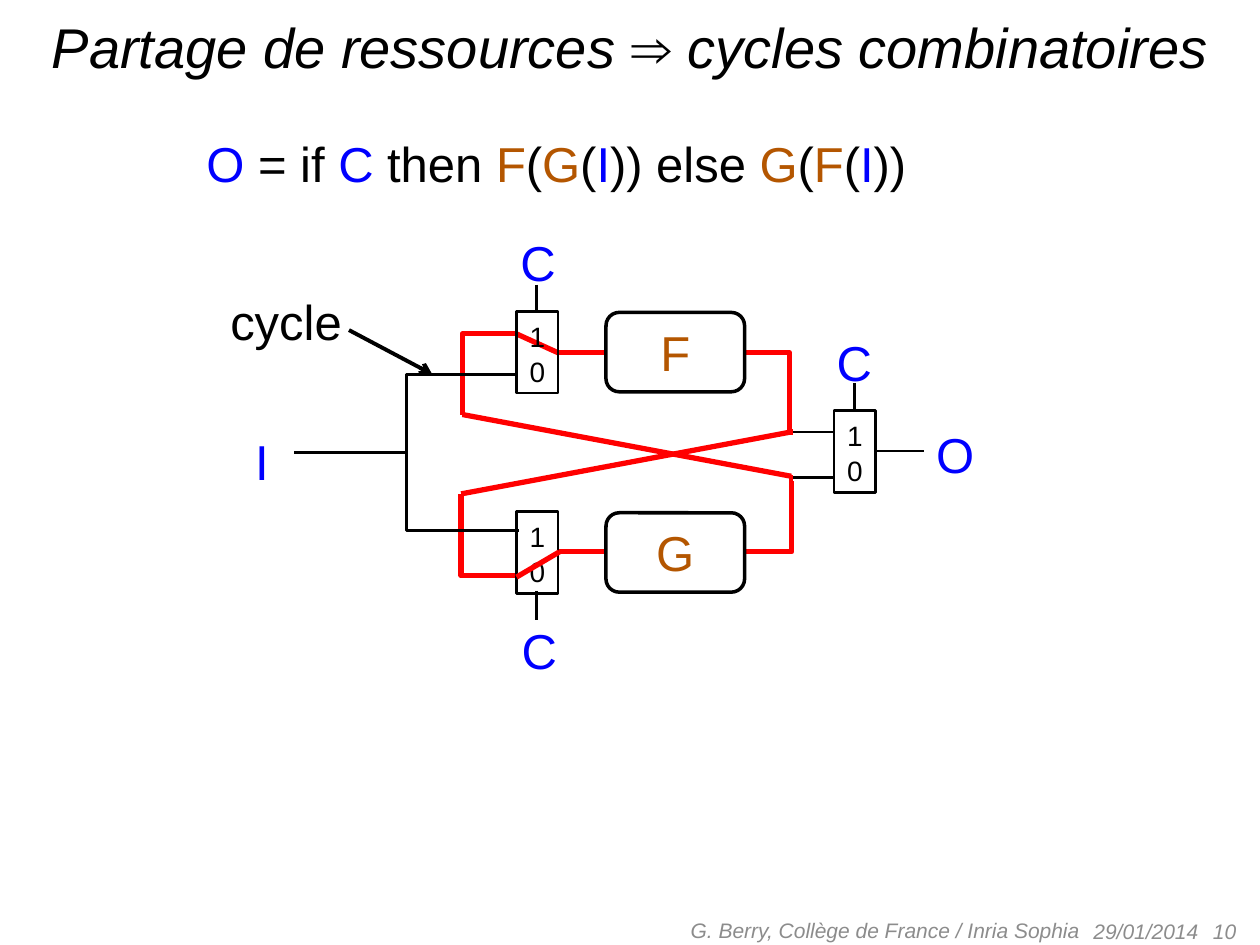
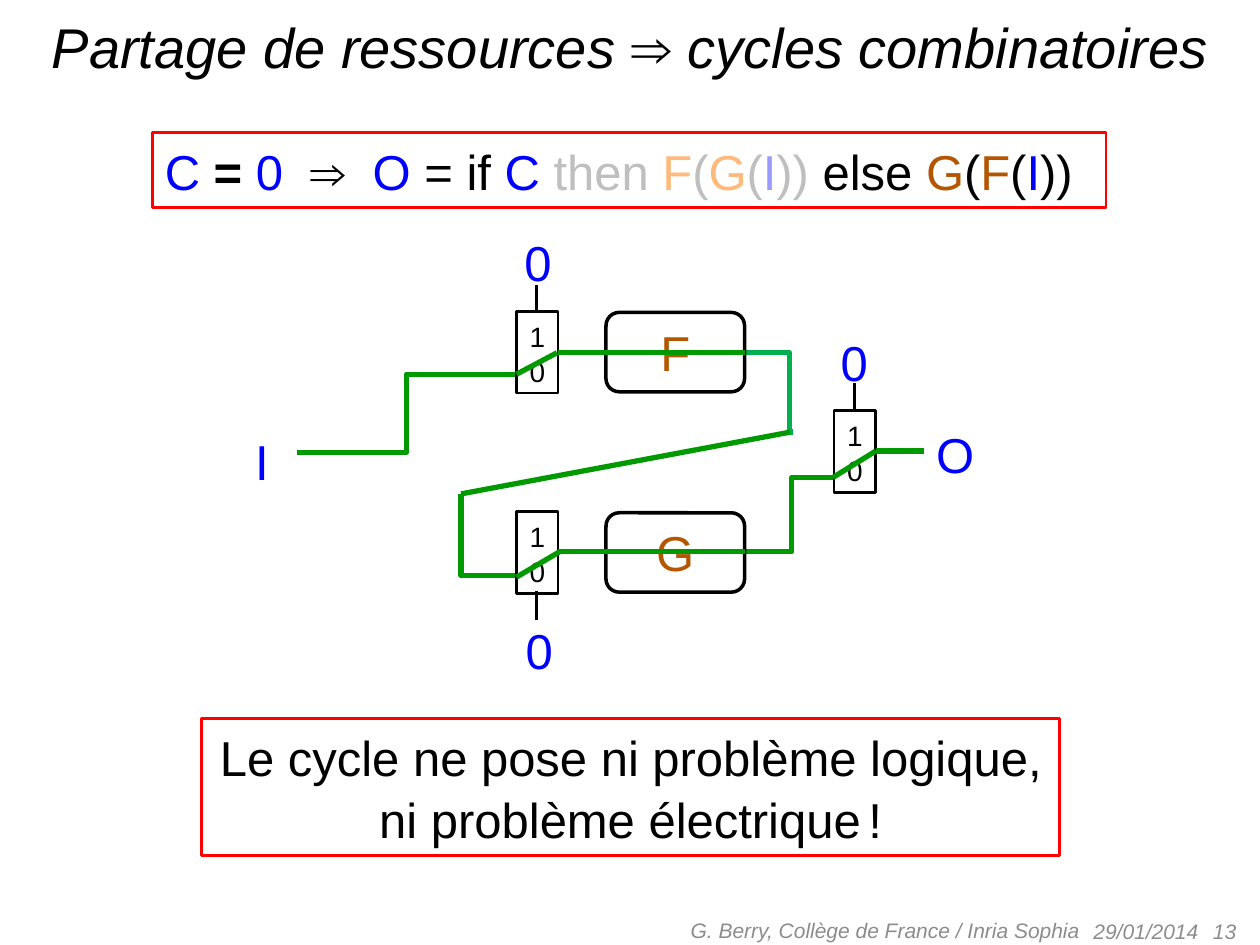
from lxml.etree import SubElement
from pptx import Presentation
from pptx.dml.color import RGBColor
from pptx.enum.shapes import MSO_CONNECTOR as Conn, MSO_SHAPE as Shape
from pptx.enum.text import MSO_ANCHOR as Anchor, PP_ALIGN as Align
from pptx.oxml.ns import qn
from pptx.util import Inches, Pt

BLACK, WHITE, RED = "000000", "FFFFFF", "FF0000"
BLUE, BROWN, GREY = "0000FF", "B45600", "8C8C8C"
GREEN, LIGHT_GREEN = "009A00", "00B050"
PALE, PALE_BROWN, PALE_BLUE = "BFBFBF", "FFBA7B", "9999FF"
ITALIC, BOLD = {"italic": True}, {"bold": True}

TITLE = [("Partage de ressources ", BLACK, ITALIC), ("⇒ ", BLACK),
         ("cycles combinatoires", BLACK, ITALIC)]
AUTHOR, DATE = "G. Berry, Collège de France / Inria Sophia", "29/01/2014"

ELSE_CALL = [("G", BROWN), ("(", BLACK), ("F", BROWN), ("(", BLACK),
             ("I", BLUE), ("))", BLACK)]
FORMULA = [("O", BLUE), (" = if ", BLACK), ("C", BLUE), (" then ", BLACK),
           ("F", BROWN), ("(", BLACK), ("G", BROWN), ("(", BLACK),
           ("I", BLUE), (")) else ", BLACK), *ELSE_CALL]
FORMULA_ZERO = [("C ", BLUE), ("= ", BLACK, BOLD), ("0  ", BLUE),
                ("⇒  ", BLACK, BOLD), ("O ", BLUE), ("= if ", BLACK),
                ("C ", BLUE), ("then ", PALE), ("F", PALE_BROWN), ("(", PALE),
                ("G", PALE_BROWN), ("(", PALE), ("I", PALE_BLUE),
                ("))", PALE), (" else ", BLACK), *ELSE_CALL]
CONCLUSION = [[("Le cycle ne pose ni problème logique,", BLACK)],
              [("ni problème électrique", BLACK),
               (" ", BLACK, {"size": Pt(16)}), ("!", BLACK)]]

BLOCKS = [("F", 2.48), ("G", 4.07)]
MUXES = [(4.1, 2.47, None), (4.1, 4.06, WHITE), (6.62, 3.26, WHITE)]
SELECTORS = [(4.27, 1.77), (4.28, 4.85), (6.78, 2.57)]
PORTS = [("I", 2.08, 3.35), ("O", 7.58, 3.3)]

F_IN, G_IN = (4.43, 2.8, 4.81, 2.8), (4.43, 4.38, 4.81, 4.38)
F_THROUGH, G_THROUGH = (4.81, 2.8, 5.91, 2.8), (4.81, 4.38, 5.91, 4.38)
F_OUT, G_OUT = (5.91, 2.8, 6.62, 3.43, 0.5), (5.91, 4.38, 6.66, 3.79, 0.5)
F_TO_G = [(4.09, 4.57, 3.66, 3.92, 1), (3.66, 3.92, 6.27, 3.43)]
G_TO_F = [(4.1, 2.65, 3.67, 3.29, 1), (3.67, 3.29, 6.28, 3.78)]
MUX_G_LOW = (4.1, 4.58, 4.44, 4.38)
I_TO_F, I_TO_G = (4.09, 2.97, 2.36, 3.59, 0.5), (4.12, 4.21, 2.33, 3.59, 0.5)
OUTPUT = (6.95, 3.58, 7.33, 3.58)
SELECT_STEMS = [(4.26, 2.26, 4.26, 2.47), (4.26, 4.69, 4.26, 4.92),
                (6.78, 3.04, 6.78, 3.25)]
MUX_O_HIGH, MUX_O_LOW = (6.29, 3.43, 6.62, 3.43), (6.29, 3.79, 6.62, 3.79)

SLIDES = [
    {"number": "10", "select": "C",
     "below": [(RED, 3, [F_OUT, G_OUT, F_IN, G_IN, (4.1, 2.65, 4.43, 2.8),
                         *F_TO_G, *G_TO_F]),
               (WHITE, 4.5, [MUX_O_HIGH, MUX_O_LOW])],
     "above": [(BLACK, 1.5, [I_TO_F, I_TO_G, OUTPUT, *SELECT_STEMS,
                             MUX_O_HIGH, MUX_O_LOW]),
               (RED, 3, [MUX_G_LOW])]},
    {"number": "13", "select": "0",
     "below": [(LIGHT_GREEN, 3, [F_OUT]), (GREEN, 3, [G_OUT]),
               (WHITE, 4.5, [MUX_O_HIGH])],
     "above": [(BLACK, 1.5, SELECT_STEMS),
               (GREEN, 3, [F_IN, G_IN, F_THROUGH, G_THROUGH, OUTPUT, I_TO_F,
                           *F_TO_G, (4.1, 2.97, 4.42, 2.8), MUX_G_LOW,
                           (6.61, 3.79, 6.95, 3.58)])]},
]


def rgb(value):
    return RGBColor.from_string(value)


def write(sp, paras, size=28, align=Align.CENTER, wrap=False, spacing=1.05,
          anchor=Anchor.TOP):
    tf = sp.text_frame
    tf.word_wrap, tf.vertical_anchor = wrap, anchor
    for i, runs in enumerate(paras):
        p = tf.add_paragraph() if i else tf.paragraphs[0]
        p.alignment, p.line_spacing = align, spacing
        for text, colour, *extra in runs:
            r = p.add_run()
            r.text = text
            r.font.color.rgb = rgb(colour)
            style = {"name": "Arial", "size": Pt(size)}
            for item in extra:
                style.update(item)
            for key, value in style.items():
                setattr(r.font, key, value)


def add_text(s, box, runs, **style):
    write(s.shapes.add_textbox(*map(Inches, box)), [runs], **style)


def add_box(s, kind, box, line, width, fill, paras, **style):
    sp = s.shapes.add_shape(kind, *map(Inches, box))
    sp.shadow.inherit = False
    sp.line.color.rgb, sp.line.width = rgb(line), Pt(width)
    if fill:
        sp.fill.solid()
        sp.fill.fore_color.rgb = rgb(fill)
    else:
        sp.fill.background()
    write(sp, paras, **style)


def add_wire(s, colour, width, ends, bend=None, arrow=False):
    kind = Conn.STRAIGHT if bend is None else Conn.ELBOW
    c = s.shapes.add_connector(kind, *map(Inches, ends))
    c.line.color.rgb, c.line.width = rgb(colour), Pt(width)
    spPr = c._element.spPr
    if bend is not None:
        av = spPr.find(qn("a:prstGeom")).get_or_add_avLst()
        SubElement(av, qn("a:gd"), name="adj1", fmla=f"val {int(bend * 100000)}")
    if arrow:
        SubElement(c.line._get_or_add_ln(), qn("a:tailEnd"), type="arrow")
    SubElement(spPr, qn("a:effectLst"))


def add_wires(s, groups):
    for colour, width, wires in groups:
        for x1, y1, x2, y2, *bend in wires:
            add_wire(s, colour, width, (x1, y1, x2, y2), *bend)


def add_frame(s, number):
    add_text(s, (0.25, 0.05, 9.5, 0.64), TITLE, size=32, wrap=True, spacing=1)
    for text, box, align in [
            (AUTHOR, (5.08, 7.18, 3.59, 0.4), Align.RIGHT),
            (DATE, (8.58, 7.19, 1.1, 0.4), Align.LEFT),
            (number, (9.31, 7.19, 0.6, 0.4), Align.RIGHT)]:
        add_text(s, box, [(text, GREY, ITALIC)], size=12, align=align,
                 wrap=True, spacing=1, anchor=Anchor.MIDDLE)


def add_circuit(s, select, below, above):
    add_wires(s, below)
    for name, y in BLOCKS:
        add_box(s, Shape.ROUNDED_RECTANGLE, (4.81, y, 1.1, 0.63), BLACK, 2,
                WHITE, [[(name, BROWN)]], spacing=1)
    for x, y, fill in MUXES:
        add_box(s, Shape.RECTANGLE, (x, y, 0.33, 0.65), BLACK, 1.5, fill,
                [[("1", BLACK)], [("0", BLACK)]], size=16)
    for text, x, y in PORTS + [(select, *at) for at in SELECTORS]:
        add_text(s, (x - 0.25, y, 0.5, 0.56), [(text, BLUE)])
    add_wires(s, above)


def main():
    prs = Presentation()
    prs.slide_width, prs.slide_height = Inches(10), Inches(7.5)
    slides = []
    for data in SLIDES:
        s = prs.slides.add_slide(prs.slide_layouts[6])
        add_frame(s, data["number"])
        add_circuit(s, data["select"], data["below"], data["above"])
        slides.append(s)
    cycle, solved = slides

    add_text(cycle, (1.54, 0.99, 5.83, 0.6), FORMULA, align=Align.LEFT, wrap=True)
    add_text(cycle, (1.72, 2.24, 1.1, 0.56), [("cycle", BLACK)])
    add_wire(cycle, BLACK, 2.25, (2.77, 2.62, 3.43, 2.97), arrow=True)

    add_box(solved, Shape.RECTANGLE, (1.21, 1.05, 7.57, 0.6), RED, 1.5, None,
            [FORMULA_ZERO], align=Align.LEFT, wrap=True)
    add_box(solved, Shape.RECTANGLE, (1.6, 5.7, 6.81, 1.09), RED, 1.5, None,
            CONCLUSION)
    prs.save("out.pptx")


if __name__ == "__main__":
    main()
